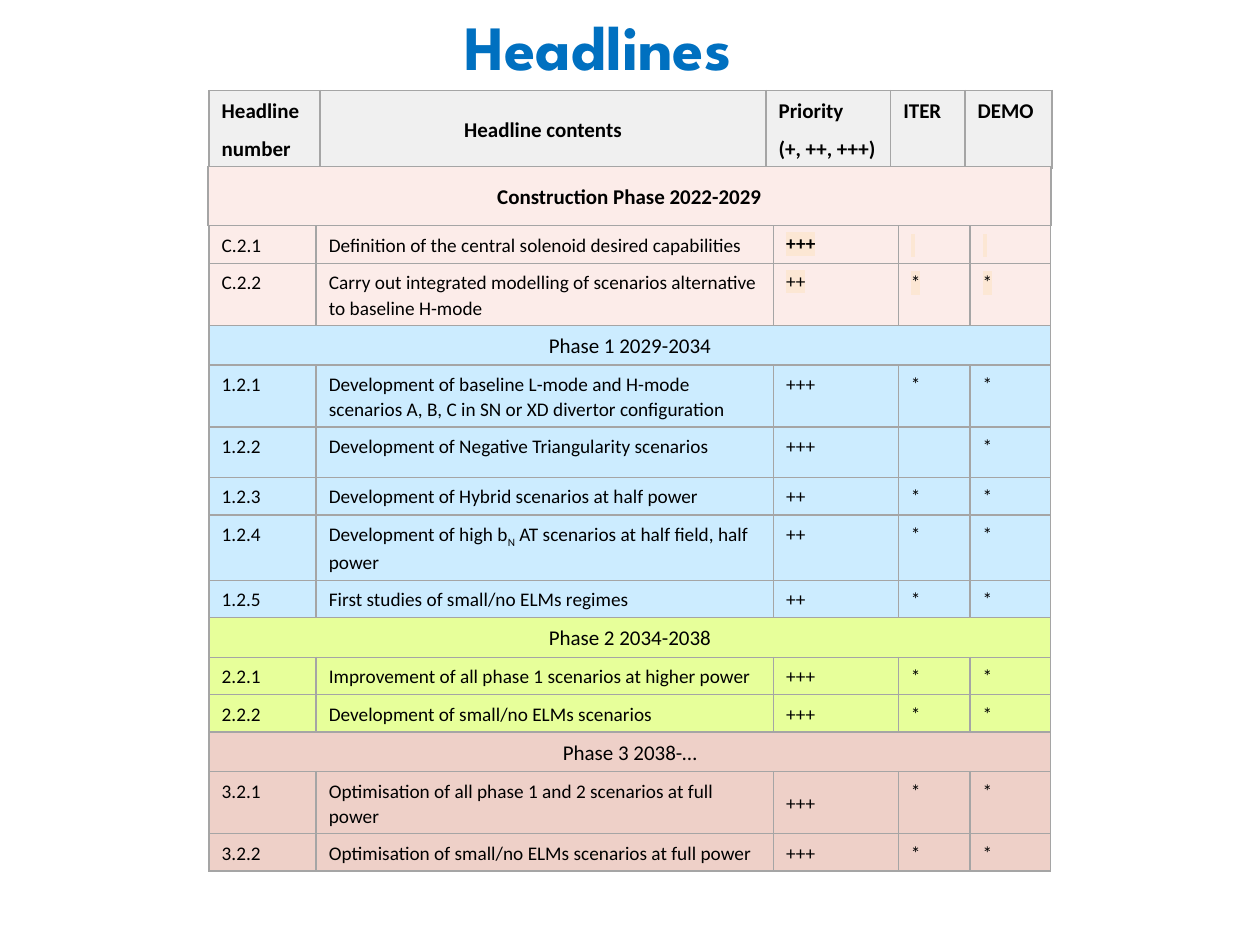
"""Build the Headlines slide: a table of research headlines by phase."""
from dataclasses import dataclass

from lxml import etree
from pptx import Presentation
from pptx.dml.color import RGBColor
from pptx.enum import text
from pptx.oxml import ns
from pptx.util import Inches, Pt

BLACK = RGBColor(0x00, 0x00, 0x00)
TITLE_BLUE = RGBColor(0x00, 0x70, 0xC0)
BORDER_GREY = RGBColor(0xA5, 0xA5, 0xA5)
HEADER_GREY = RGBColor(0xF0, 0xF0, 0xF0)
CONSTRUCTION_PINK = RGBColor(0xFC, 0xEC, 0xE9)
PHASE_BLUE = RGBColor(0xCC, 0xEC, 0xFF)
PHASE_LIME = RGBColor(0xE7, 0xFF, 0x9A)
PHASE_ROSE = RGBColor(0xEE, 0xD0, 0xC8)
MARK_PEACH = RGBColor(0xFC, 0xE7, 0xD4)

LEFT, CENTER = text.PP_ALIGN.LEFT, text.PP_ALIGN.CENTER
TOP, MIDDLE = text.MSO_ANCHOR.TOP, text.MSO_ANCHOR.MIDDLE


@dataclass(frozen=True)
class CellStyle:
    size: float = 11
    bold: bool = False
    align: text.PP_ALIGN = LEFT
    anchor: text.MSO_ANCHOR = TOP
    line_spacing: float = 1.07
    space_after: float = 6
    margins: tuple = (0.1, 0.05)
    highlight: RGBColor | None = None


@dataclass(frozen=True)
class Headline:
    number: str
    contents: str | tuple
    priority: str
    iter: str = "*"
    demo: str = "*"
    height: float = 0.28
    priority_style: CellStyle = CellStyle()
    mark_style: CellStyle = CellStyle()


@dataclass(frozen=True)
class Phase:
    title: str
    color: RGBColor
    headlines: tuple


BODY = CellStyle()
CENTRED = CellStyle(anchor=MIDDLE)
MARKED = CellStyle(highlight=MARK_PEACH)
MARKED_PLAIN = CellStyle(line_spacing=1, space_after=0, highlight=MARK_PEACH)
MARKED_BOLD = CellStyle(bold=True, line_spacing=1, space_after=0, highlight=MARK_PEACH)
PHASE_TITLE = CellStyle(size=12, align=CENTER, anchor=MIDDLE)
HEADER = CellStyle(size=12, bold=True)
HEADER_CENTRED = CellStyle(size=12, bold=True, align=CENTER, anchor=MIDDLE)
CONSTRUCTION_TITLE = CellStyle(size=12, bold=True, align=CENTER, anchor=MIDDLE,
                               line_spacing=1.15, space_after=10, margins=(0.07, 0))

HEADER_CELLS = (
    (("Headline", "number"), HEADER),
    (("Headline contents",), HEADER_CENTRED),
    (("Priority", "(+, ++, +++)"), HEADER),
    (("ITER",), HEADER),
    (("DEMO",), HEADER),
)

PHASES = (
    Phase("", CONSTRUCTION_PINK, (
        Headline("C.2.1", "Definition of the central solenoid desired capabilities", "+++",
                 " ", " ", 0.3, MARKED_BOLD, MARKED),
        Headline("C.2.2", "Carry out integrated modelling of scenarios alternative to baseline H-mode",
                 "++", height=0.47, priority_style=MARKED_PLAIN, mark_style=MARKED),
    )),
    Phase("Phase 1 2029-2034", PHASE_BLUE, (
        Headline("1.2.1", "Development of baseline L-mode and H-mode scenarios A, B, C "
                 "in SN or XD divertor configuration", "+++", height=0.47),
        Headline("1.2.2", "Development of Negative Triangularity scenarios", "+++", iter=""),
        Headline("1.2.3", "Development of Hybrid scenarios at half power", "++"),
        Headline("1.2.4", ("Development of high b", "N", " AT scenarios at half field, half power"),
                 "++", height=0.47),
        Headline("1.2.5", "First studies of small/no ELMs regimes", "++"),
    )),
    Phase("Phase 2 2034-2038", PHASE_LIME, (
        Headline("2.2.1", "Improvement of all phase 1 scenarios at higher power", "+++"),
        Headline("2.2.2", "Development of small/no ELMs scenarios", "+++", priority_style=CENTRED),
    )),
    Phase("Phase 3 2038-…", PHASE_ROSE, (
        Headline("3.2.1", "Optimisation of all phase 1 and 2 scenarios at full power", "+++",
                 height=0.47, priority_style=CENTRED),
        Headline("3.2.2", "Optimisation of small/no ELMs scenarios at full power", "+++",
                 priority_style=CENTRED),
    )),
)


def add_highlight(run, color: RGBColor) -> None:
    """Put a background colour behind a run."""
    properties = run.font._element
    highlight = etree.SubElement(properties, ns.qn("a:highlight"))
    etree.SubElement(highlight, ns.qn("a:srgbClr"), val=str(color))


def add_borders(cell) -> None:
    """Draw a thin grey line on each side of a cell."""
    properties = cell._tc.get_or_add_tcPr()
    for position, side in enumerate(("lnL", "lnR", "lnT", "lnB")):
        line = etree.Element(ns.qn(f"a:{side}"), w=str(Pt(1)))
        fill = etree.SubElement(line, ns.qn("a:solidFill"))
        etree.SubElement(fill, ns.qn("a:srgbClr"), val=str(BORDER_GREY))
        properties.insert(position, line)


def write_paragraph(paragraph, runs: tuple, style: CellStyle) -> None:
    """Write runs in one paragraph, every second run as a subscript."""
    paragraph.alignment = style.align
    paragraph.line_spacing = style.line_spacing
    paragraph.space_after = Pt(style.space_after)
    font = paragraph.font
    font.name, font.size, font.bold = "Calibri", Pt(style.size), style.bold
    font.color.rgb = BLACK
    for index, words in enumerate(runs):
        run = paragraph.add_run()
        run.text = words
        if index % 2:
            run.font._element.set("baseline", "-25000")
        if style.highlight:
            add_highlight(run, style.highlight)


def fill_cell(cell, lines: tuple, style: CellStyle, color: RGBColor) -> None:
    """Style a cell and write one paragraph for each line."""
    cell.fill.solid()
    cell.fill.fore_color.rgb = color
    cell.vertical_anchor = style.anchor
    cell.margin_left = cell.margin_right = Inches(style.margins[0])
    cell.margin_top = cell.margin_bottom = Inches(style.margins[1])
    add_borders(cell)
    frame = cell.text_frame
    for index, line in enumerate(lines):
        paragraph = frame.add_paragraph() if index else frame.paragraphs[0]
        write_paragraph(paragraph, (line,) if isinstance(line, str) else line, style)


def add_grid(slide, left: float, top: float, widths: tuple, heights: tuple):
    """Add an unstyled table with the given column widths and row heights."""
    table = slide.shapes.add_table(len(heights), len(widths), Inches(left), Inches(top),
                                   Inches(sum(widths)), Inches(sum(heights))).table
    table.first_row = table.horz_banding = False
    for column, width in zip(table.columns, widths):
        column.width = Inches(width)
    for row, height in zip(table.rows, heights):
        row.height = Inches(height)
    return table


def add_title(slide) -> None:
    """Add the slide title."""
    frame = slide.shapes.add_textbox(Inches(0.85), 0, Inches(7.79), Inches(0.79)).text_frame
    frame.word_wrap = True
    frame.vertical_anchor = MIDDLE
    paragraph = frame.paragraphs[0]
    paragraph.text = "Headlines"
    paragraph.alignment, paragraph.line_spacing = CENTER, 0.9
    font = paragraph.font
    font.name, font.size, font.bold = "League Spartan", Pt(36), True
    font.color.rgb = TITLE_BLUE


def add_headline_table(slide) -> None:
    """Add the table of all phases and their headlines."""
    rows = [(entry, phase.color) for phase in PHASES
            for entry in ((phase.title,) if phase.title else ()) + phase.headlines]
    heights = tuple(0.31 if isinstance(entry, str) else entry.height for entry, _ in rows)
    table = add_grid(slide, 1.66, 1.79, (0.85, 3.63, 0.99, 0.57, 0.64), heights)
    for row, (entry, color) in enumerate(rows):
        if isinstance(entry, str):
            table.cell(row, 0).merge(table.cell(row, 4))
            values = ((entry, PHASE_TITLE),) + (("", BODY),) * 4
        else:
            values = ((entry.number, BODY), (entry.contents, BODY),
                      (entry.priority, entry.priority_style),
                      (entry.iter, entry.mark_style), (entry.demo, entry.mark_style))
        for column, (words, style) in enumerate(values):
            fill_cell(table.cell(row, column), (words,), style, color)


def main() -> None:
    """Build and save the presentation."""
    presentation = Presentation()
    presentation.slide_width, presentation.slide_height = Inches(10), Inches(7.5)
    slide = presentation.slides.add_slide(presentation.slide_layouts[6])
    add_title(slide)
    header = add_grid(slide, 1.66, 0.72, (0.88, 3.54, 0.99, 0.59, 0.69), (0.6,))
    for column, (lines, style) in enumerate(HEADER_CELLS):
        fill_cell(header.cell(0, column), lines, style, HEADER_GREY)
    add_headline_table(slide)
    construction = add_grid(slide, 1.65, 1.32, (6.69,), (0.47,))
    fill_cell(construction.cell(0, 0), ("Construction Phase 2022-2029",),
              CONSTRUCTION_TITLE, CONSTRUCTION_PINK)
    presentation.save("out.pptx")


if __name__ == "__main__":
    main()
